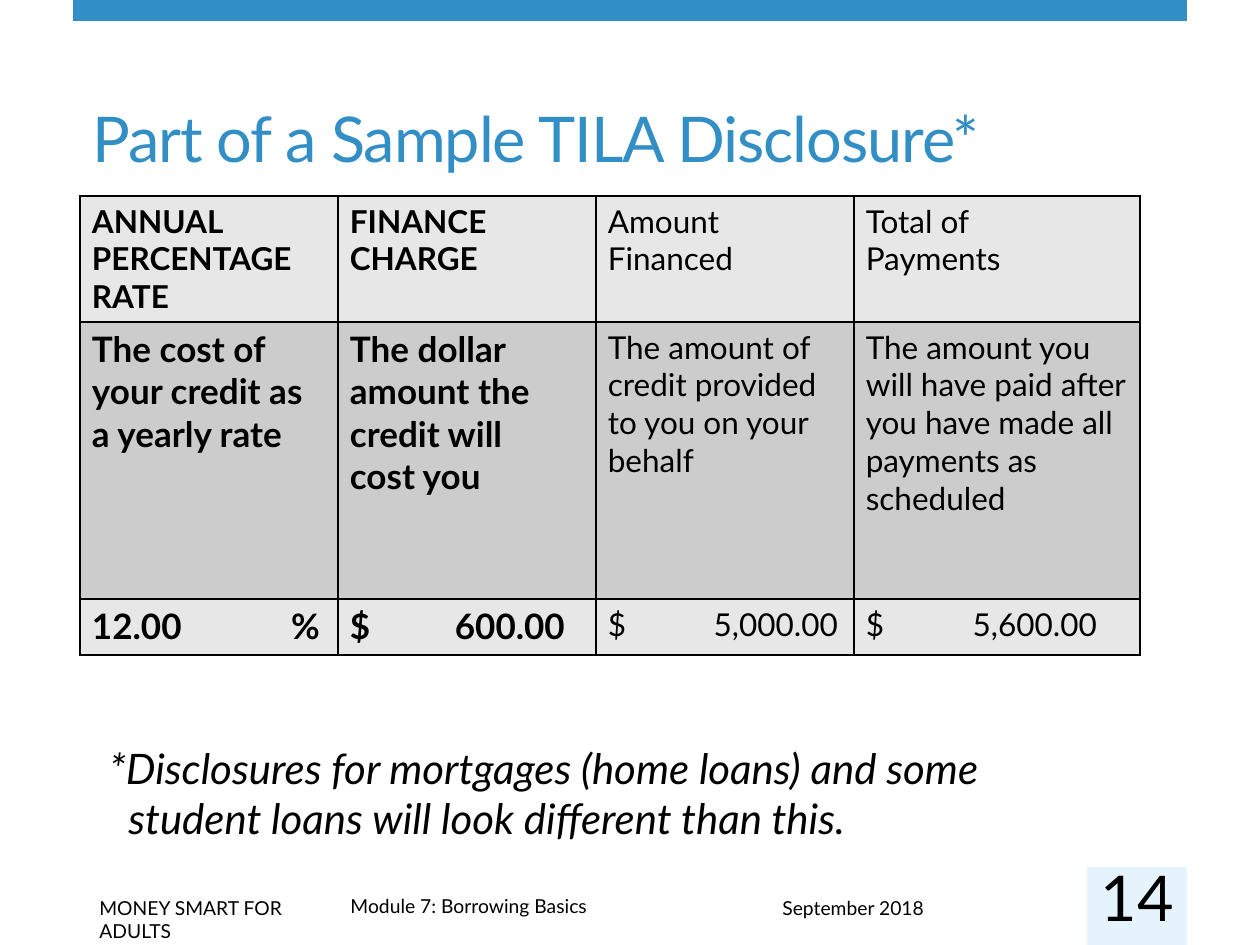
from lxml import etree
from pptx import Presentation
from pptx import util as u
from pptx.dml.color import RGBColor
from pptx.enum import shapes, text
from pptx.oxml import ns

FONT = "Lato"
BLUE, PALE, BLACK = "318FC5", "E4F3FC", "000000"
LIGHT, GREY = "E7E7E7", "CCCCCC"

COLS = [258, 258, 258, 286]
ROWS = [126, 277, 56]
FILLS = [LIGHT, GREY, LIGHT]
TABS = [228, 215, 230, 231]  # right edge of each amount
CELLS = [
    ["ANNUAL\nPERCENTAGE RATE", "FINANCE\nCHARGE",
     "Amount\nFinanced", "Total of\nPayments"],
    ["The cost of\nyour credit as\na yearly rate",
     "The dollar amount the credit will\ncost you",
     "The amount of credit provided to you on your behalf",
     "The amount you will have paid after you have made all "
     "payments as scheduled"],
    ["12.00\t%", "$\t600.00", "$\t5,000.00", "$\t5,600.00"],
]


def px(n):
    return u.Emu(round(n * 914400 / 126))


def rgb(code):
    return RGBColor.from_string(code)


def sub(node, tag, **attrs):
    return etree.SubElement(node, ns.qn(tag), attrs)


def write(para, words, size, color=BLACK, bold=False, ital=False):
    """Add the words as runs, with a line break at each newline."""
    runs = []
    for i, line in enumerate(words.split("\n")):
        if i:
            para.add_line_break()
        run = para.add_run()
        run.text = line
        font = run.font
        font.name, font.size = FONT, u.Pt(size)
        font.bold, font.italic = bold, ital
        font.color.rgb = rgb(color)
        runs.append(run)
    return runs


def bar(slide, x, y, w, h, color):
    shape = slide.shapes.add_shape(
        shapes.MSO_SHAPE.RECTANGLE, px(x), px(y), px(w), px(h))
    shape.shadow.inherit = False
    shape.fill.solid()
    shape.fill.fore_color.rgb = rgb(color)
    shape.line.fill.background()


def label(slide, x, y, w, h, words, size, **style):
    """Add a wrapped text box; return its frame and runs."""
    frame = slide.shapes.add_textbox(px(x), px(y), px(w), px(h)).text_frame
    frame.word_wrap = True
    return frame, write(frame.paragraphs[0], words, size, **style)


def edge(cell):
    props = cell._tc.get_or_add_tcPr()
    for side in ("L", "R", "T", "B"):
        line = sub(props, f"a:ln{side}", w=str(u.Pt(1)))
        sub(sub(line, "a:solidFill"), "a:srgbClr", val=BLACK)


def stop(para, pos):
    """Set a right-aligned tab stop."""
    tabs = sub(para._p.get_or_add_pPr(), "a:tabLst")
    sub(tabs, "a:tab", pos=str(px(pos)), algn="r")


def grid(slide, x, y):
    table = slide.shapes.add_table(
        len(ROWS), len(COLS), px(x), px(y),
        px(sum(COLS)), px(sum(ROWS))).table
    for col, w in zip(table.columns, COLS):
        col.width = px(w)
    for r, line in enumerate(CELLS):
        table.rows[r].height = px(ROWS[r])
        for c, words in enumerate(line):
            cell = table.cell(r, c)
            edge(cell)
            cell.fill.solid()
            cell.fill.fore_color.rgb = rgb(FILLS[r])
            cell.margin_left = cell.margin_right = px(12)
            cell.margin_top = cell.margin_bottom = px(6)
            para = cell.text_frame.paragraphs[0]
            if "\t" in words:
                stop(para, TABS[c])
            bold = c < 2
            write(para, words, 20 if bold and r else 18, bold=bold)


def title(slide):
    frame, runs = label(slide, 80, 60, 1033, 121,
                        "Part of a Sample TILA Disclosure*", 36, color=BLUE)
    frame.vertical_anchor = text.MSO_ANCHOR.BOTTOM
    for run in runs:
        run._r.get_or_add_rPr().set("spc", "-60")


def note(slide):
    frame, _ = label(slide, 97, 736, 1028, 115,
                     "*Disclosures for mortgages (home loans) and some\n"
                     "student loans will look different than this.",
                     24, ital=True)
    props = frame.paragraphs[0]._p.get_or_add_pPr()
    props.set("marL", str(px(19)))
    props.set("indent", str(-px(19)))


def number(slide):
    bar(slide, 1087, 867, 100, 78, PALE)
    frame, _ = label(slide, 1087, 877, 100, 39, "14", 36)
    frame.margin_left = frame.margin_right = 0
    frame.margin_top = frame.margin_bottom = 0
    frame.vertical_anchor = text.MSO_ANCHOR.MIDDLE
    frame.paragraphs[0].alignment = text.PP_ALIGN.CENTER


def main():
    deck = Presentation()
    deck.slide_width, deck.slide_height = px(1260), px(945)
    slide = deck.slides.add_slide(deck.slide_layouts[6])
    bar(slide, 73, 0, 1114, 21, BLUE)
    for x, y, w, words in [
        (338, 888, 713, "Module 7: Borrowing Basics"),
        (87, 890, 263, "MONEY SMART FOR ADULTS"),
        (770, 890, 317, "September 2018"),
    ]:
        label(slide, x, y, w, 36, words, 11)
    title(slide)
    grid(slide, 80, 196)
    note(slide)
    number(slide)
    deck.save("out.pptx")


if __name__ == "__main__":
    main()
